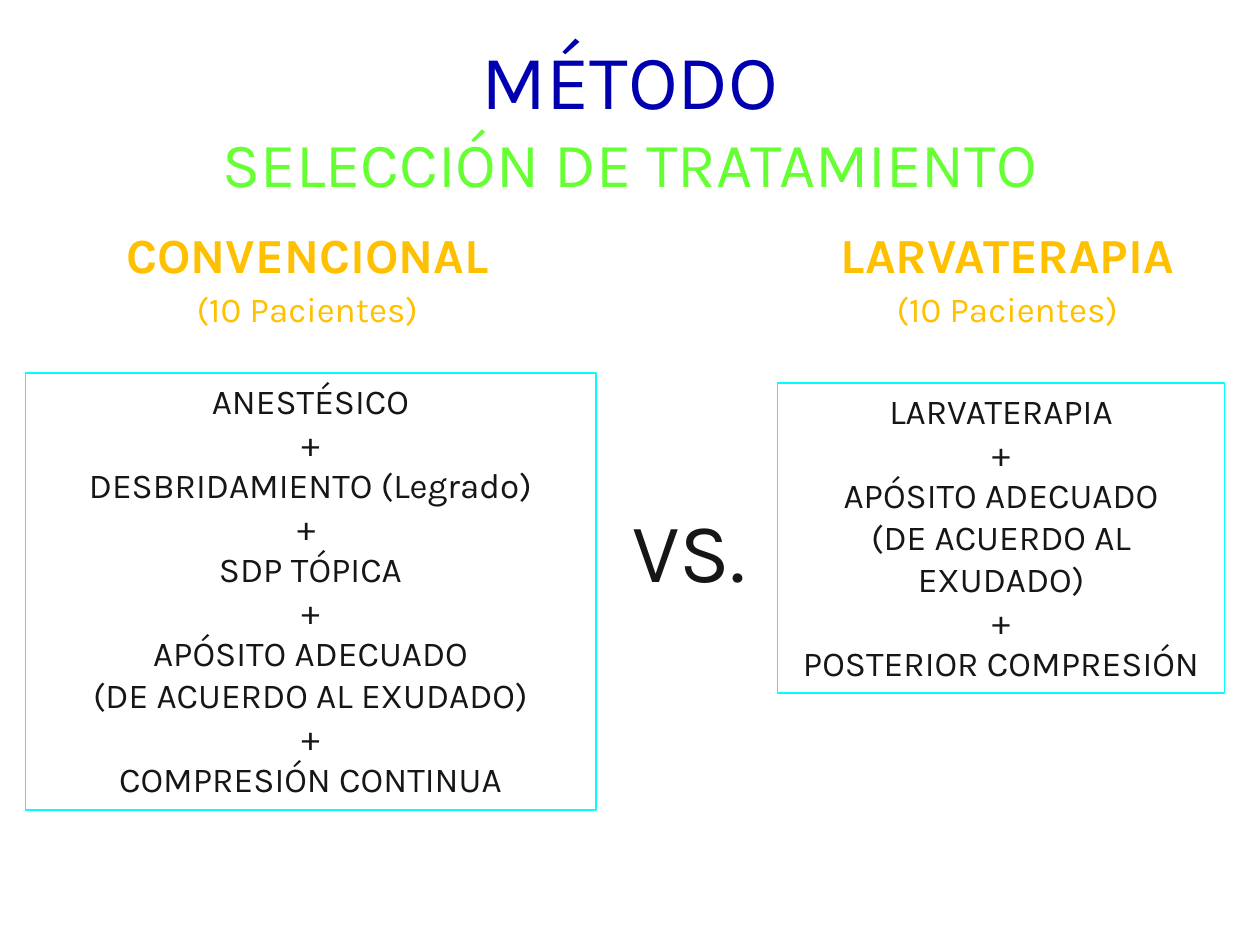
from pptx import Presentation
from pptx.dml.color import RGBColor
from pptx.enum.shapes import MSO_SHAPE
from pptx.enum.text import MSO_ANCHOR, MSO_AUTO_SIZE, PP_ALIGN
from pptx.util import Pt

RECTANGLE = MSO_SHAPE.RECTANGLE
TOP, MIDDLE = MSO_ANCHOR.TOP, MSO_ANCHOR.MIDDLE
GROW = MSO_AUTO_SIZE.SHAPE_TO_FIT_TEXT
CENTER = PP_ALIGN.CENTER

FONT = "Karla"
BLUE, GREEN, GOLD, INK, CYAN = "0100B0", "66FF33", "FFC000", "161616", "00FFFF"

TITLE = [("MÉTODO", 44, BLUE), ("SELECCIÓN DE TRATAMIENTO", 36, GREEN)]
TITLE_BOX = (36, 21.6, 648, 90)
VERSUS = "VS."
VERSUS_BOX = (267.84, 281.52, 251.28, 64.8)
TREATMENTS = [
    {
        "name": "CONVENCIONAL",
        "patients": "(10 Pacientes)",
        "heading_box": (48.24, 133.92, 254.88, 59.76),
        "steps": ["ANESTÉSICO", "+", "DESBRIDAMIENTO (Legrado)", "+ ", "SDP TÓPICA", "+",
                  "APÓSITO ADECUADO", "(DE ACUERDO AL EXUDADO)", "+", "COMPRESIÓN CONTINUA"],
        "steps_box": (14.4, 213.12, 326.16, 249.84),
    },
    {
        "name": "LARVATERAPIA",
        "patients": "(10 Pacientes)",
        "heading_box": (456.48, 133.92, 238.32, 59.76),
        "steps": ["LARVATERAPIA", "+", "APÓSITO ADECUADO", "(DE ACUERDO AL EXUDADO)", "+",
                  "POSTERIOR COMPRESIÓN"],
        "steps_box": (444.24, 218.88, 255.6, 177.12),
    },
]


def rgb(value):
    return RGBColor.from_string(value)


def format_run(r, size, color, bold=False):
    r.font.name, r.font.size, r.font.bold = FONT, Pt(size), bold
    r.font.color.rgb = rgb(color)


def fill_text(sp, lines, color):
    tf = sp.text_frame
    tf.word_wrap, tf.auto_size, tf.vertical_anchor = True, GROW, TOP
    tf.text = "\n".join(text for text, _, _ in lines)
    for p, (_, size, bold) in zip(tf.paragraphs, lines):
        p.alignment = CENTER
        format_run(p.runs[0], size, color, bold)
    return tf


def add_title(s):
    sp = s.shapes.title
    sp.left, sp.top, sp.width, sp.height = map(Pt, TITLE_BOX)
    tf = sp.text_frame
    tf.vertical_anchor = MIDDLE
    tf.text = "\v".join(text for text, _, _ in TITLE)
    p = tf.paragraphs[0]
    p.alignment = CENTER
    for r, (_, size, color) in zip(p.runs, TITLE):
        format_run(r, size, color)


def add_heading(s, treatment):
    sp = s.shapes.add_textbox(*map(Pt, treatment["heading_box"]))
    lines = [(treatment["name"], 28, True), (treatment["patients"], 20, False)]
    tf = fill_text(sp, lines, GOLD)
    for p, (_, size, _) in zip(tf.paragraphs, lines):
        p.line_spacing = 0.7
        p.space_before = Pt(size / 2)


def add_steps(s, treatment):
    sp = s.shapes.add_shape(RECTANGLE, *map(Pt, treatment["steps_box"]))
    sp.shadow.inherit = False
    sp.fill.background()
    sp.line.color.rgb = rgb(CYAN)
    sp.line.width = Pt(0.75)
    fill_text(sp, [(step, 20, False) for step in treatment["steps"]], INK)


def main():
    """Build the treatment selection slide."""
    prs = Presentation()
    prs.slide_width, prs.slide_height = Pt(720), Pt(540)
    s = prs.slides.add_slide(prs.slide_layouts[5])
    add_title(s)
    for treatment in TREATMENTS:
        add_steps(s, treatment)
    versus = s.shapes.add_textbox(*map(Pt, VERSUS_BOX))
    tf = fill_text(versus, [(VERSUS, 48, False)], INK)
    tf.paragraphs[0].space_before = Pt(24)
    for treatment in TREATMENTS:
        add_heading(s, treatment)
    prs.save("out.pptx")


if __name__ == "__main__":
    main()
